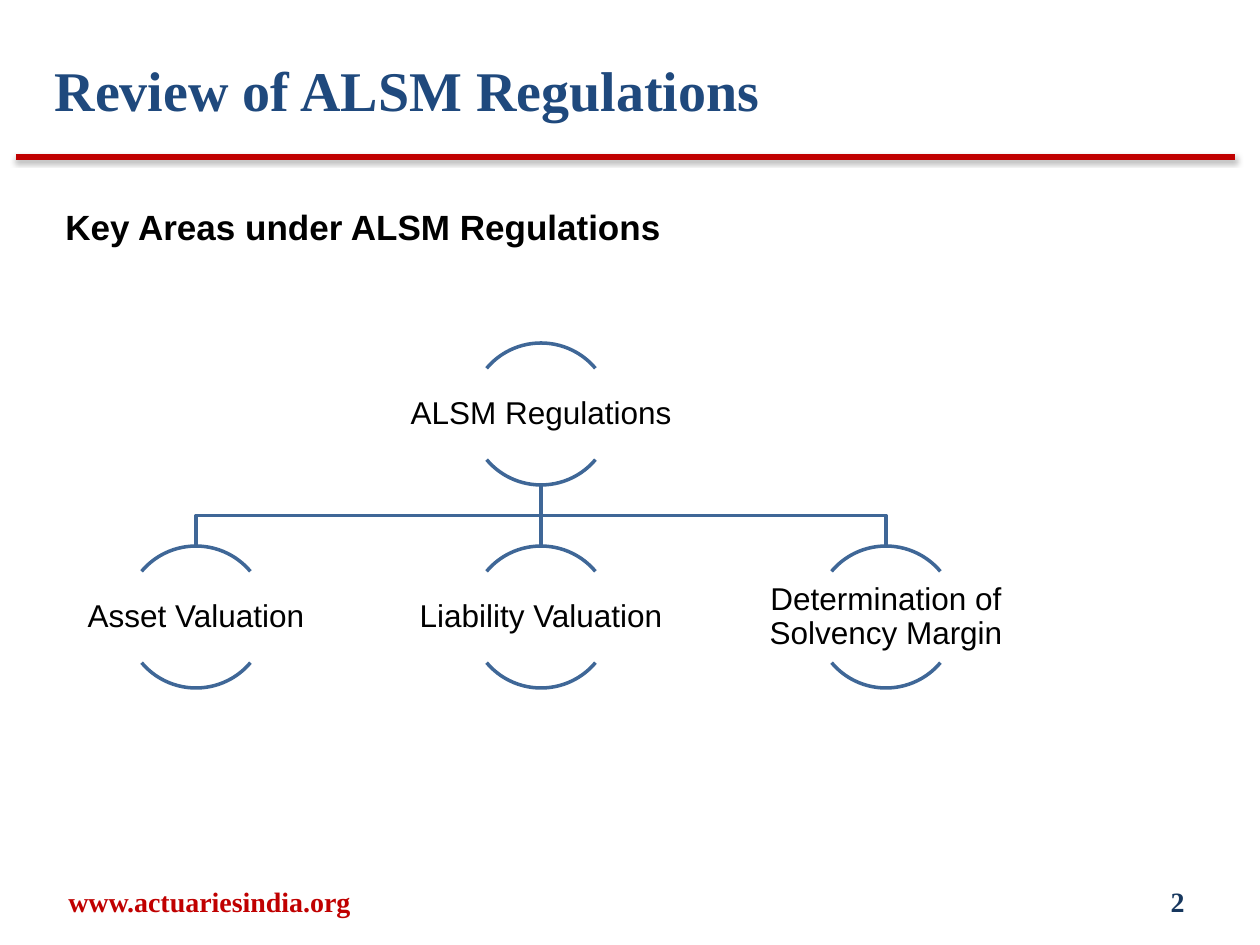
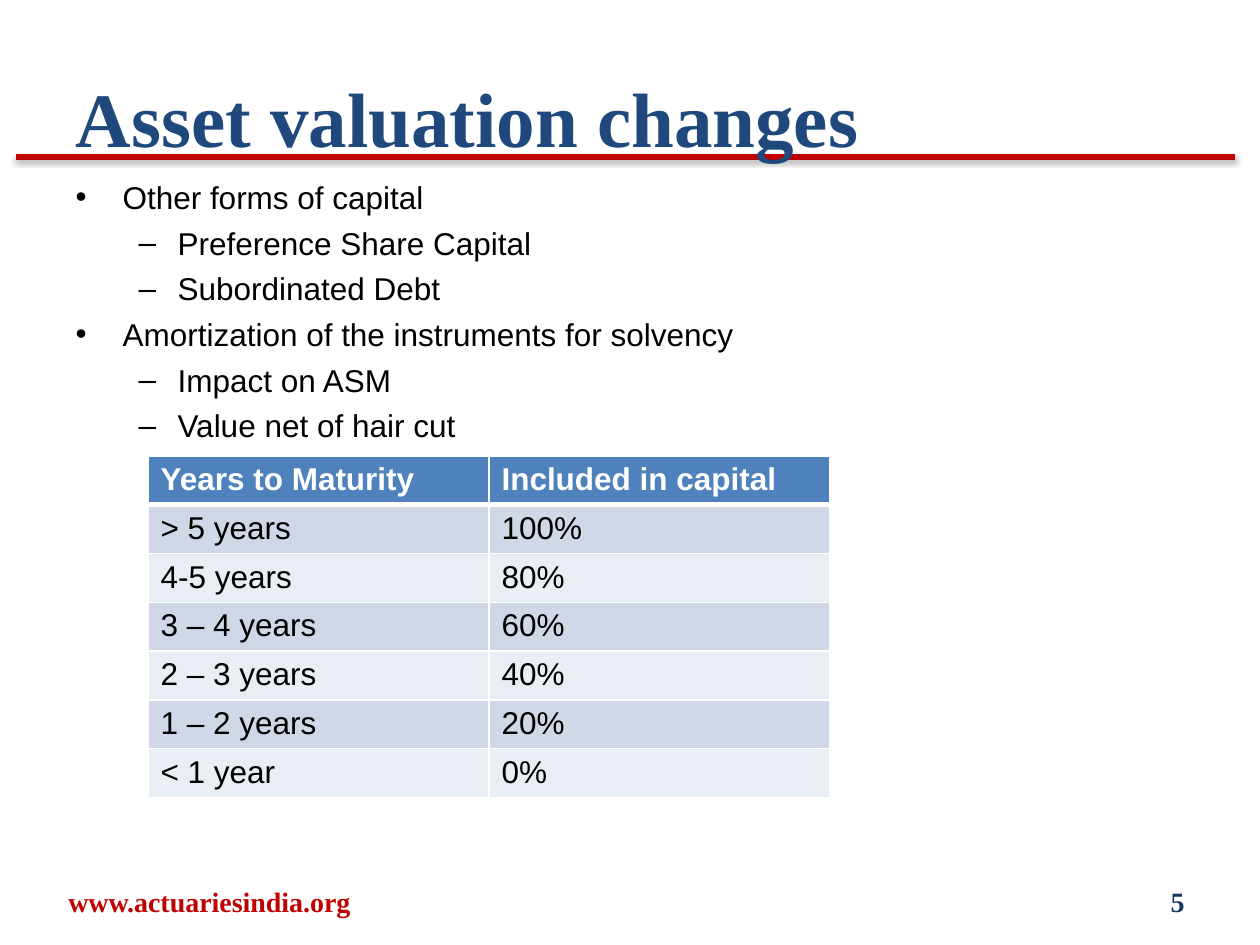
from dataclasses import dataclass

from lxml.etree import SubElement
from pptx import Presentation
from pptx.dml.color import RGBColor
from pptx.enum.shapes import MSO_CONNECTOR, MSO_SHAPE
from pptx.enum.text import MSO_ANCHOR, MSO_AUTO_SIZE, PP_ALIGN
from pptx.oxml.ns import qn
from pptx.util import Emu, Pt

# Content
SITE = "www.actuariesindia.org"
REGULATIONS = {
    "title": "Review of ALSM Regulations",
    "number": "2",
    "heading": "Key Areas under ALSM Regulations",
    "root": "ALSM Regulations",
    "areas": ["Asset Valuation", "Liability Valuation", "Determination of Solvency Margin"],
}
ASSETS = {
    "title": "Asset valuation changes",
    "number": "5",
    "points": [
        (0, "Other forms of capital"),
        (1, "Preference Share Capital"),
        (1, "Subordinated Debt"),
        (0, "Amortization of the instruments for solvency"),
        (1, "Impact on ASM"),
        (1, "Value net of hair cut"),
    ],
    "maturities": [
        ("Years to Maturity", "Included in capital"),
        ("> 5 years", "100%"),
        ("4-5 years", "80%"),
        ("3 – 4 years", "60%"),
        ("2 – 3 years", "40%"),
        ("1 – 2 years", "20%"),
        ("< 1 year", "0%"),
    ],
}


@dataclass(frozen=True)
class Theme:
    serif: str = "Times New Roman"
    sans: str = "Arial"
    title: str = "1F497D"
    accent: str = "C00000"
    number: str = "17375E"
    ink: str = "000000"
    paper: str = "FFFFFF"
    diagram: str = "3F6797"
    header: str = "4F81BD"
    bands: tuple = ("D0D8E8", "E9EDF4")
    body_size: int = 18
    heading_size: int = 20
    footer_size: int = 16


THEME = Theme()

# Geometry in px, 126 to the inch
SLIDE = (1260, 945)
RULE = (16, 157, 1235)
CIRCLE = 142
LABEL = (286, 92)
ROOT_CENTRE, AREA_PITCH = 541, 345
ROOT_TOP, AREA_TOP = 343, 546
ARC_ANGLES = [(220, 320), (40, 140)]
TABLE_AT = (148, 456)
COLUMN, ROW = 341, 48
BULLETS = [("•", 47, -47), ("–", 102, -39)]  # character, left margin, first-line indent


def px(length):
    return Emu(round(length * 914400 / 126))


def box(*lengths):
    return [px(length) for length in lengths]


def colour(code):
    return RGBColor.from_string(code)


def add_run(paragraph, text, size, ink=THEME.ink, font=THEME.sans, bold=False):
    run = paragraph.add_run()
    run.text = text
    run.font.size, run.font.name, run.font.bold = Pt(size), font, bold
    run.font.color.rgb = colour(ink)


def add_label(slide, place, text, size, align=PP_ALIGN.LEFT, anchor=MSO_ANCHOR.MIDDLE,
              inset=None, spacing=None, **style):
    frame = slide.shapes.add_textbox(*box(*place)).text_frame
    frame.word_wrap, frame.vertical_anchor = True, anchor
    if inset is not None:
        frame.margin_left = frame.margin_right = px(inset)
        frame.margin_top = frame.margin_bottom = px(inset)
    paragraph = frame.paragraphs[0]
    paragraph.alignment = align
    if spacing:
        paragraph.line_spacing = spacing
    add_run(paragraph, text, size, **style)


def place_frame(placeholder, place, anchor, top_inset=6):
    placeholder.left, placeholder.top, placeholder.width, placeholder.height = box(*place)
    frame = placeholder.text_frame
    frame.auto_size, frame.vertical_anchor = MSO_AUTO_SIZE.NONE, anchor
    frame.margin_top = px(top_inset)
    return frame


def stroke(shape, code, points):
    shape.line.color.rgb = colour(code)
    shape.line.width = Pt(points)


def add_line(slide, start, end, code, points):
    line = slide.shapes.add_connector(MSO_CONNECTOR.STRAIGHT, *box(*start, *end))
    stroke(line, code, points)
    effects = SubElement(line._element.spPr, qn("a:effectLst"))
    return line, effects


# Shared parts
def add_master_rule(deck, slide):
    left, y, right = RULE
    rule, effects = add_line(slide, (left, y), (right, y), THEME.accent, 3)
    shadow = SubElement(effects, qn("a:outerShdw"), blurRad=str(Pt(3.1)), dist=str(Pt(1.6)),
                        dir="5400000", rotWithShape="0")
    black = SubElement(shadow, qn("a:srgbClr"), val=THEME.ink)
    SubElement(black, qn("a:alpha"), val="38000")
    deck.slide_master.shapes._spTree.append(rule._element)


def start_slide(deck, layout, content, title_place, title_size, anchor, top_inset=6):
    slide = deck.slides.add_slide(deck.slide_layouts[layout])
    title = place_frame(slide.shapes.title, title_place, anchor, top_inset).paragraphs[0]
    title.alignment = PP_ALIGN.LEFT
    add_run(title, content["title"], title_size, THEME.title, THEME.serif, True)
    footer = dict(size=THEME.footer_size, font=THEME.serif, bold=True)
    add_label(slide, (10, 876, 399, 50), SITE, align=PP_ALIGN.CENTER, ink=THEME.accent, **footer)
    add_label(slide, (903, 876, 294, 50), content["number"], align=PP_ALIGN.RIGHT,
              ink=THEME.number, **footer)
    return slide


# Organisation diagram
def add_node(slide, centre, top, text):
    for angles in ARC_ANGLES:
        arc = slide.shapes.add_shape(MSO_SHAPE.ARC,
                                     *box(centre - CIRCLE / 2, top, CIRCLE, CIRCLE))
        for i, degrees in enumerate(angles):
            arc.adjustments[i] = degrees * 0.6  # 60000ths of a degree over 100000
        arc.shadow.inherit = False
        arc.fill.background()
        stroke(arc, THEME.diagram, 2)
    width, height = LABEL
    add_label(slide, (centre - width / 2, top + (CIRCLE - height) / 2, width, height), text,
              THEME.body_size, PP_ALIGN.CENTER, inset=1, spacing=0.9)


def add_branch(slide, centre):
    start, end = ROOT_TOP + CIRCLE, AREA_TOP
    if centre == ROOT_CENTRE:
        add_line(slide, (centre, start), (centre, end), THEME.diagram, 2)
        return
    middle = (start + end) / 2
    outline = slide.shapes.build_freeform(px(ROOT_CENTRE), px(start))
    outline.add_line_segments(
        [box(ROOT_CENTRE, middle), box(centre, middle), box(centre, end)], close=False)
    branch = outline.convert_to_shape()
    branch.shadow.inherit = False
    branch.fill.background()
    stroke(branch, THEME.diagram, 2)


def add_diagram(slide, root, areas):
    first = ROOT_CENTRE - AREA_PITCH * (len(areas) - 1) // 2
    centres = [first + AREA_PITCH * i for i in range(len(areas))]
    for centre in centres:
        add_branch(slide, centre)
    add_node(slide, ROOT_CENTRE, ROOT_TOP, root)
    for centre, area in zip(centres, areas):
        add_node(slide, centre, AREA_TOP, area)


# Bulleted list
def fill_points(frame, points):
    for i, (level, text) in enumerate(points):
        paragraph = frame.paragraphs[0] if i == 0 else frame.add_paragraph()
        paragraph.level = level
        character, margin, indent = BULLETS[level]
        properties = paragraph._p.get_or_add_pPr()
        properties.set("marL", str(px(margin)))
        properties.set("indent", str(px(indent)))
        SubElement(properties, qn("a:buChar"), char=character)
        paragraph.space_before = Pt(4.5 if i else 0)
        add_run(paragraph, text, THEME.body_size)


# Maturity table
def set_border(cell, side, points):
    line = SubElement(cell._tc.get_or_add_tcPr(), qn(f"a:ln{side}"), w=str(Pt(points)))
    SubElement(SubElement(line, qn("a:solidFill")), qn("a:srgbClr"), val=THEME.paper)


def add_maturity_table(slide, rows):
    columns = len(rows[0])
    table = slide.shapes.add_table(
        len(rows), columns, *box(*TABLE_AT, COLUMN * columns, ROW * len(rows))).table
    for column in table.columns:
        column.width = px(COLUMN)
    for r, row in enumerate(rows):
        table.rows[r].height = px(ROW)
        header = r == 0
        for c, text in enumerate(row):
            cell = table.cell(r, c)
            cell.margin_top, cell.margin_bottom = box(6, 5)
            widths = {"L": 1, "R": 1, "T": 3 if r == 1 else 1, "B": 3 if header else 1}
            for side, points in widths.items():
                set_border(cell, side, points)
            cell.fill.solid()
            cell.fill.fore_color.rgb = colour(THEME.header if header else THEME.bands[(r - 1) % 2])
            add_run(cell.text_frame.paragraphs[0], text, THEME.body_size,
                    THEME.paper if header else THEME.ink, bold=header)


def main():
    deck = Presentation()
    deck.slide_width, deck.slide_height = box(*SLIDE)

    # Key areas
    regulations = start_slide(deck, 5, REGULATIONS, (42, 42, 1207, 84), 32, MSO_ANCHOR.TOP, 13)
    add_master_rule(deck, regulations)
    add_diagram(regulations, REGULATIONS["root"], REGULATIONS["areas"])
    add_label(regulations, (53, 199, 998, 55), REGULATIONS["heading"], THEME.heading_size,
              anchor=MSO_ANCHOR.TOP, bold=True)

    # Asset valuation
    assets = start_slide(deck, 1, ASSETS, (63, 38, 1134, 158), 44, MSO_ANCHOR.MIDDLE)
    points = place_frame(assets.placeholders[1], (63, 168, 1134, 714), MSO_ANCHOR.TOP, 10)
    fill_points(points, ASSETS["points"])
    add_maturity_table(assets, ASSETS["maturities"])

    deck.save("out.pptx")


if __name__ == "__main__":
    main()
